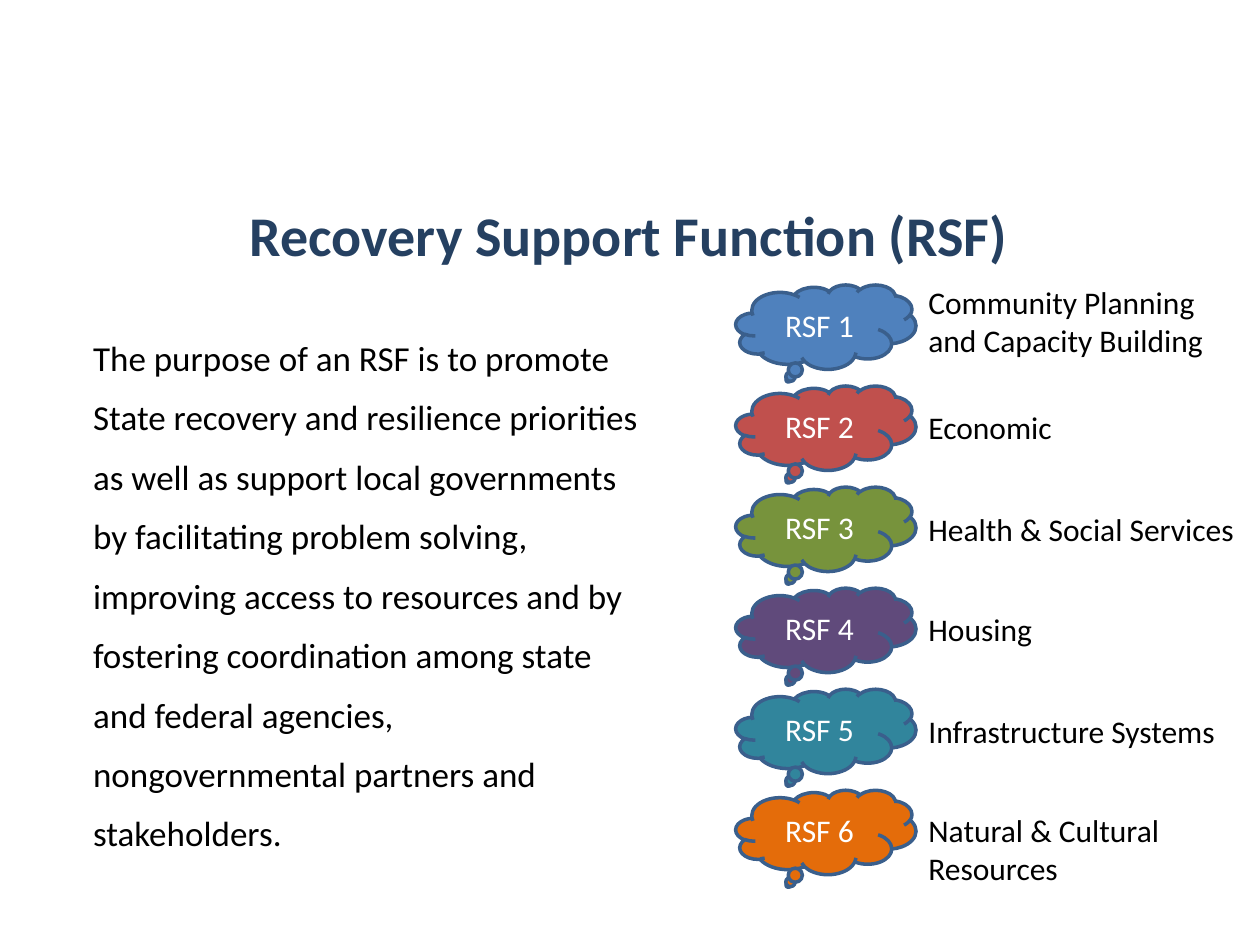
from pptx import Presentation
from pptx.dml.color import RGBColor
from pptx.enum import shapes, text
from pptx.util import Inches, Pt

COLORS = {
    "title": "254061",
    "body": "000000",
    "cloud_text": "FFFFFF",
    "outline": "3A5F8C",
    "blue": "4F81BD",
    "red": "C0504D",
    "green": "77933C",
    "purple": "604A7B",
    "teal": "31859C",
    "orange": "E46C0A",
}
PURPOSE = (
    "The purpose of an RSF is to promote State recovery and resilience priorities "
    "as well as support local governments by facilitating problem solving, "
    "improving access to resources and by fostering coordination among state "
    "and federal agencies, nongovernmental partners and stakeholders."
)
FUNCTIONS = [
    ("Community Planning and Capacity Building", "blue", 2.2, 0.71),
    ("Economic", "red", 3.19, 0.4),
    ("Health & Social Services", "green", 4, 0.4),
    ("Housing", "purple", 4.79, 0.4),
    ("Infrastructure Systems", "teal", 5.6, 0.4),
    ("Natural & Cultural Resources", "orange", 6.39, 0.71),
]
CLOUD_TOP = 2.26
CLOUD_PITCH = 0.802


def color(name):
    return RGBColor.from_string(COLORS[name])


def write(box, words, size, color_name, align=text.PP_ALIGN.LEFT, bold=False):
    box.text_frame.word_wrap = True
    para = box.text_frame.paragraphs[0]
    para.text = words
    para.alignment = align
    for span in para.runs:
        span.font.name = "Calibri"
        span.font.size = Pt(size)
        span.font.bold = bold
        span.font.color.rgb = color(color_name)
    return para


def add_title(page):
    title = page.shapes.title
    title.left, title.top = Inches(0.49), Inches(1.51)
    title.width, title.height = Inches(9), Inches(0.7)
    title.text_frame.vertical_anchor = text.MSO_ANCHOR.MIDDLE
    write(title, "Recovery Support Function (RSF)", 32, "title",
          text.PP_ALIGN.CENTER, bold=True)


def add_purpose(page):
    box = page.shapes.add_textbox(Inches(0.64), Inches(2.48), Inches(4.59), Inches(4.35))
    para = write(box, PURPOSE, 20, "body")
    para.line_spacing = Pt(34)
    para.space_after = Pt(18)


def add_cloud(group, words, top, fill):
    cloud = group.shapes.add_shape(
        shapes.MSO_SHAPE.CLOUD_CALLOUT,
        Inches(5.84), Inches(top), Inches(1.43), Inches(0.67))
    cloud.shadow.inherit = False
    cloud.fill.solid()
    cloud.fill.fore_color.rgb = color(fill)
    cloud.line.color.rgb = color("outline")
    cloud.line.width = Pt(2)
    cloud.text_frame.vertical_anchor = text.MSO_ANCHOR.MIDDLE
    write(cloud, words, 18, "cloud_text", text.PP_ALIGN.CENTER)


def add_function(page, index, label, fill, label_top, label_height):
    group = page.shapes.add_group_shape()
    add_cloud(group, f"RSF {index + 1}", CLOUD_TOP + index * CLOUD_PITCH, fill)
    box = group.shapes.add_textbox(
        Inches(7.27), Inches(label_top), Inches(2.73), Inches(label_height))
    write(box, label, 18, "body")


def main():
    deck = Presentation()
    deck.slide_width, deck.slide_height = Inches(10), Inches(7.5)
    page = deck.slides.add_slide(deck.slide_layouts[5])
    add_title(page)
    add_purpose(page)
    for index, function in enumerate(FUNCTIONS):
        add_function(page, index, *function)
    deck.save("out.pptx")


if __name__ == "__main__":
    main()
